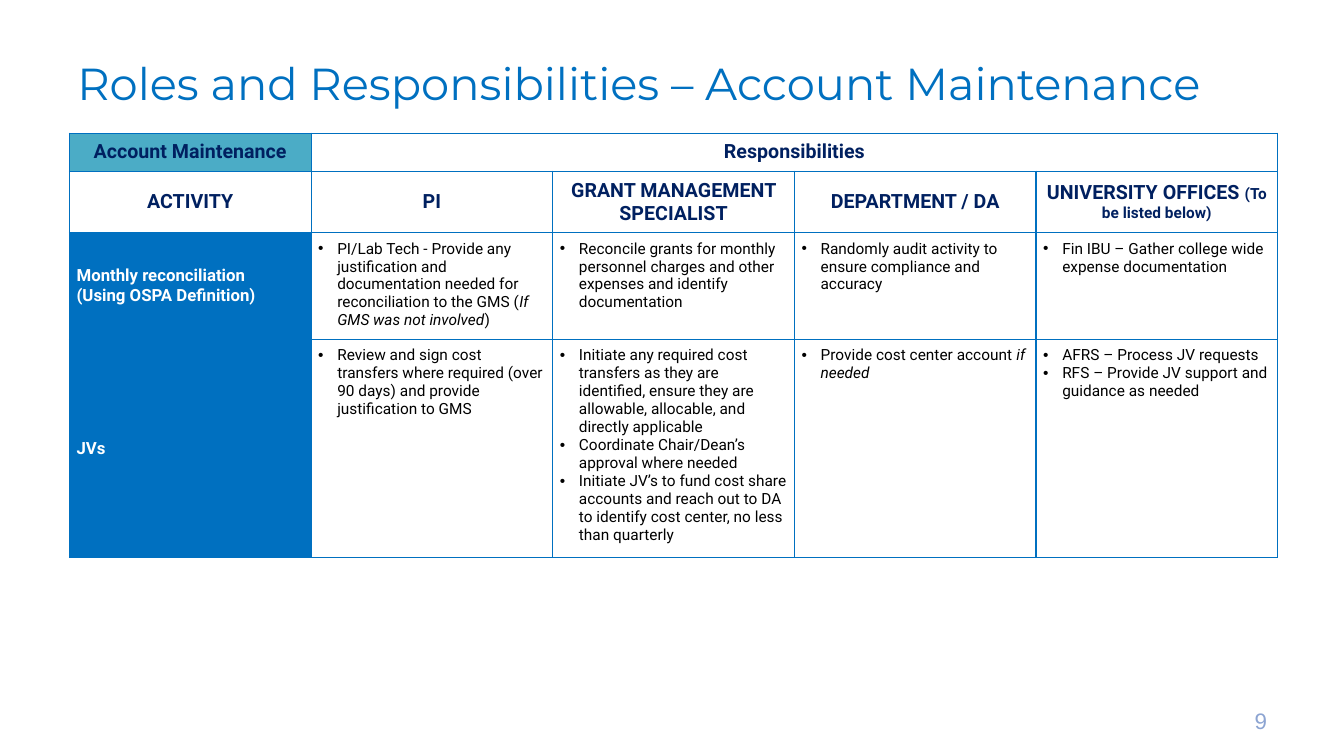
from lxml import etree
from pptx import Presentation
from pptx.dml.color import RGBColor
from pptx.enum import text as t
from pptx.oxml import ns
from pptx.util import Cm, Pt

COLORS = {"blue": "0070C0", "navy": "002060", "teal": "4BACC6",
          "white": "FFFFFF", "black": "000000", "number": "8CA4D2"}
MARGIN = Cm(0.18)
INDENT = Cm(0.48)
ROW_HEIGHTS = [0.93, 1.53, 2.6, 5.32]
HEADINGS = [
    ["Account Maintenance", "Responsibilities"],
    ["ACTIVITY", "PI", "GRANT MANAGEMENT SPECIALIST", "DEPARTMENT / DA",
     "UNIVERSITY OFFICES |(To be listed below)"],
]
# One list of paragraphs per cell; asterisks enclose italics
ACTIVITIES = [
    [["Monthly reconciliation", "(Using OSPA Definition)"],
     ["PI/Lab Tech - Provide any justification and documentation needed for "
      "reconciliation to the GMS (*If GMS was not involved*)"],
     ["Reconcile grants for monthly personnel charges and other expenses and "
      "identify documentation"],
     ["Randomly audit activity to ensure compliance and accuracy"],
     ["Fin IBU – Gather college wide expense documentation"]],
    [["JVs"],
     ["Review and sign cost transfers where required (over 90 days) and "
      "provide justification to GMS"],
     ["Initiate any required cost transfers as they are identified, ensure "
      "they are allowable, allocable, and directly applicable",
      "Coordinate Chair/Dean’s approval where needed",
      "Initiate JV’s to fund cost share accounts and reach out to DA to "
      "identify cost center, no less than quarterly"],
     ["Provide cost center account *if needed*"],
     ["AFRS – Process JV requests",
      "RFS – Provide JV support and guidance as needed"]],
]


def set_font(p, name, size, color, bold=False):
    p.font.name, p.font.size, p.font.bold = name, Pt(size), bold
    p.font.color.rgb = RGBColor.from_string(COLORS[color])


def add_xml(parent, tag, index=None, **attrs):
    """Create a DrawingML child, at index if given, and return it."""
    child = etree.SubElement(parent, ns.qn(tag), attrs)
    if index is not None:
        parent.insert(index, child)
    return child


prs = Presentation()
prs.slide_width, prs.slide_height = Cm(33.87), Cm(19.05)
s = prs.slides.add_slide(prs.slide_layouts[6])

# Title
tf = s.shapes.add_textbox(Cm(1.7), Cm(0.89), Cm(33.35), Cm(1.85)).text_frame
tf.word_wrap = True
tf.margin_top = Cm(0.2)
p = tf.paragraphs[0]
p.text = "Roles and Responsibilities – Account Maintenance"
p.line_spacing = Pt(47.2)
set_font(p, "Montserrat", 32, "blue")

# Slide number
tf = s.shapes.add_textbox(Cm(24.28), Cm(17.65), Cm(7.9), Cm(1.02)).text_frame
tf.word_wrap = True
tf.vertical_anchor = t.MSO_ANCHOR.MIDDLE
p = tf.paragraphs[0]
p.text = "9"
p.alignment = t.PP_ALIGN.RIGHT
set_font(p, "Arial", 16, "number")

# Table grid: fills, margins and borders
table = s.shapes.add_table(4, 5, Cm(1.75), Cm(3.36), Cm(30.45),
                           Cm(sum(ROW_HEIGHTS))).table
table.first_row = table.horz_banding = False
for column in table.columns:
    column.width = Cm(6.09)
for i, height in enumerate(ROW_HEIGHTS):
    table.rows[i].height = Cm(height)
    for j in range(5):
        cell = table.cell(i, j)
        cell.margin_left = cell.margin_right = MARGIN
        cell.margin_top = cell.margin_bottom = MARGIN
        if i < 2 or j == 0:
            cell.vertical_anchor = t.MSO_ANCHOR.MIDDLE
        color = "white"
        if j == 0 and i != 1:
            color = "teal" if i == 0 else "blue"
        cell.fill.solid()
        cell.fill.fore_color.rgb = RGBColor.from_string(COLORS[color])
        for k, side in enumerate("LRTB"):
            line = add_xml(cell._tc.get_or_add_tcPr(), f"a:ln{side}", k,
                           w=str(Pt(1)))
            fill = add_xml(line, "a:solidFill")
            add_xml(fill, "a:srgbClr", val=COLORS["blue"])
table.cell(0, 1).merge(table.cell(0, 4))

# Headings
for i, row in enumerate(HEADINGS):
    for j, heading in enumerate(row):
        p = table.cell(i, j).text_frame.paragraphs[0]
        p.alignment = t.PP_ALIGN.CENTER
        set_font(p, "Roboto", 14, "navy", True)
        for k, part in enumerate(heading.split("|")):
            r = p.add_run()
            r.text = part
            if k:
                r.font.size = Pt(11)

# Activities and their responsibilities
for i, row in enumerate(ACTIVITIES, start=2):
    for j, paragraphs in enumerate(row):
        tf = table.cell(i, j).text_frame
        for n, content in enumerate(paragraphs):
            p = tf.add_paragraph() if n else tf.paragraphs[0]
            if j == 0:
                set_font(p, "Roboto", 12, "white", True)
            else:
                pPr = p._p.get_or_add_pPr()
                pPr.set("marL", str(INDENT))
                pPr.set("indent", str(-INDENT))
                add_xml(pPr, "a:buFont", typeface="Arial")
                add_xml(pPr, "a:buChar", char="•")
                set_font(p, "Roboto", 11, "black")
            for k, part in enumerate(content.split("*")):
                if part:
                    r = p.add_run()
                    r.text = part
                    if k % 2:
                        r.font.italic = True

prs.save("out.pptx")
